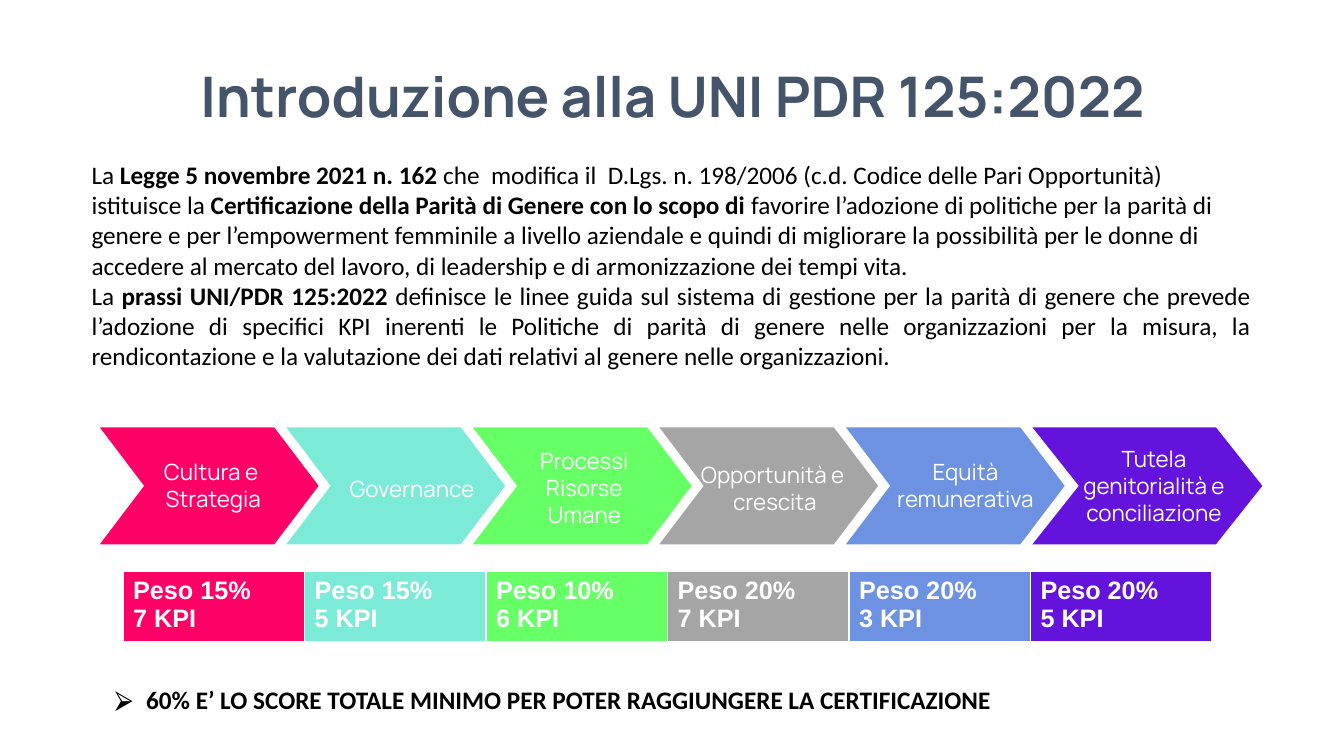
from lxml import etree
from pptx import Presentation
from pptx.dml.color import RGBColor
from pptx.enum.shapes import MSO_SHAPE
from pptx.enum.text import MSO_ANCHOR, MSO_AUTO_SIZE, PP_ALIGN
from pptx.oxml.ns import qn
from pptx.util import Inches, Pt

CHEVRON = MSO_SHAPE.CHEVRON
TOP = MSO_ANCHOR.TOP
GROW = MSO_AUTO_SIZE.SHAPE_TO_FIT_TEXT
LEFT, CENTER, JUSTIFY = PP_ALIGN.LEFT, PP_ALIGN.CENTER, PP_ALIGN.JUSTIFY

WHITE, BLACK, SLATE = "FFFFFF", "000000", "44546A"

AREAS = [
    ("FF0066", ["Cultura e ", "Strategia"], (1.22, 4.5, 0.64), 15, 7),
    ("7BEBD8", ["Governance"], (3.19, 4.66, 0.37), 15, 5),
    ("66FF66", ["Processi Risorse", "Umane"], (4.9, 4.39, 0.91), 10, 6),
    ("A5A5A5", ["Opportunità e ", "crescita"], (6.79, 4.53, 0.64), 20, 7),
    ("6C92E1", ["Equità remunerativa"], (8.68, 4.5, 0.64), 20, 3),
    ("6313DC", ["Tutela genitorialità e conciliazione"], (10.55, 4.37, 0.91), 20, 5),
]

LAW = [
    ("La ", False),
    ("Legge 5 novembre 2021 n. 162 ", True),
    ("che  modifica il  D.Lgs. n. 198/2006 (c.d. Codice delle Pari Opportunità) "
     "istituisce la ", False),
    ("Certificazione della Parità di Genere con lo scopo di ", True),
    ("favorire l’adozione di politiche per la parità di genere e per l’empowerment "
     "femminile a livello aziendale e quindi di migliorare la possibilità per le donne "
     "di accedere al mercato del lavoro, di leadership e di armonizzazione dei tempi "
     "vita.", False),
]
PRACTICE = [
    ("La ", False),
    ("prassi UNI/PDR 125:2022 ", True),
    ("definisce le linee guida sul sistema di gestione per la parità di genere che "
     "prevede l’adozione di specifici KPI inerenti le Politiche di parità di genere "
     "nelle organizzazioni per la misura, la rendicontazione e la valutazione dei dati "
     "relativi al genere nelle organizzazioni.", False),
]
MINIMUM_SCORE = "60% E’ LO SCORE TOTALE MINIMO PER POTER RAGGIUNGERE LA CERTIFICAZIONE"


def rgb(value):
    return RGBColor.from_string(value)


class SlideBuilder:
    heading_font, body_font, table_font = "Manrope", "Calibri", "Arial"

    def __init__(self, slide):
        self.slide = slide

    def add_runs(self, frame, paragraphs, font, size, color):
        for index, (runs, align) in enumerate(paragraphs):
            paragraph = frame.paragraphs[0] if index == 0 else frame.add_paragraph()
            paragraph.alignment = align
            paragraph.space_before = Pt(0)
            for text, bold in runs:
                run = paragraph.add_run()
                run.text = text
                run.font.name = font
                run.font.size = Pt(size)
                run.font.bold = bold
                run.font.color.rgb = rgb(color)

    def place(self, placeholder, left, top, width, height):
        placeholder.left, placeholder.top = Inches(left), Inches(top)
        placeholder.width, placeholder.height = Inches(width), Inches(height)
        frame = placeholder.text_frame
        frame.word_wrap = True
        frame.auto_size = GROW
        frame.vertical_anchor = TOP
        return frame

    def title(self, text, *box):
        frame = self.place(self.slide.shapes.title, *box)
        self.add_runs(frame, [([(text, True)], CENTER)], self.heading_font, 40, SLATE)

    def bullet(self, text, *box):
        frame = self.place(self.slide.placeholders[1], *box)
        self.add_runs(frame, [([(text, True)], JUSTIFY)], self.body_font, 18, BLACK)
        paragraph = frame.paragraphs[0]
        paragraph.level = 1
        properties = paragraph._p.get_or_add_pPr()
        properties.set("marL", str(Inches(0.81)))
        properties.set("indent", str(Inches(-0.31)))
        bullet_color = etree.SubElement(properties, qn("a:buClr"))
        etree.SubElement(bullet_color, qn("a:srgbClr"), val=BLACK)
        etree.SubElement(properties, qn("a:buFont"), typeface=self.table_font)
        etree.SubElement(properties, qn("a:buChar"), char="⮚")

    def text(self, paragraphs, font, size, color, *box):
        frame = self.place(self.slide.shapes.add_textbox(0, 0, 0, 0), *box)
        self.add_runs(frame, paragraphs, font, size, color)

    def chevron(self, color, left, top, width, height, point):
        shape = self.slide.shapes.add_shape(
            CHEVRON, Inches(left), Inches(top), Inches(width), Inches(height))
        shape.adjustments[0] = point / height
        shape.shadow.inherit = False
        shape.fill.solid()
        shape.fill.fore_color.rgb = rgb(color)
        shape.line.fill.background()

    def border(self, cell, side, width):
        line = etree.SubElement(cell._tc.get_or_add_tcPr(), qn(f"a:ln{side}"),
                                w=str(Pt(width)))
        fill = etree.SubElement(line, qn("a:solidFill"))
        etree.SubElement(fill, qn("a:srgbClr"), val=WHITE)

    def weights(self, areas, left, top, column_width, height):
        table = self.slide.shapes.add_table(
            1, len(areas), Inches(left), Inches(top),
            Inches(column_width * len(areas)), Inches(height)).table
        for column, (color, _, _, weight, kpis) in enumerate(areas):
            table.columns[column].width = Inches(column_width)
            cell = table.cell(0, column)
            for side, width in (("L", 1), ("R", 1), ("T", 1), ("B", 3)):
                self.border(cell, side, width)
            cell.fill.solid()
            cell.fill.fore_color.rgb = rgb(color)
            lines = (f"Peso {weight}%", f"{kpis} KPI")
            self.add_runs(cell.text_frame, [([(line, True)], LEFT) for line in lines],
                          self.table_font, 18, WHITE)


def main():
    deck = Presentation()
    deck.slide_width, deck.slide_height = Inches(13.33), Inches(7.5)
    builder = SlideBuilder(deck.slides.add_slide(deck.slide_layouts[1]))

    builder.title("Introduzione alla UNI PDR 125:2022", 1.71, 0.56, 9.92, 0.77)
    builder.text([(LAW, LEFT), (PRACTICE, JUSTIFY)], builder.body_font, 18, BLACK,
                 0.81, 1.53, 11.7, 2.22)

    for index, (color, *_) in enumerate(AREAS):
        is_last = index == len(AREAS) - 1
        width, point = (2.28, 0.46) if is_last else (2.17, 0.44)
        builder.chevron(color, 0.99 + 1.85 * index, 4.24, width, 1.16, point)
    for _, label, (left, top, height), *_ in AREAS:
        builder.text([([(line, False)], CENTER) for line in label],
                     builder.heading_font, 16, WHITE, left, top, 1.79, height)

    builder.weights(AREAS, 1.22, 5.67, 1.8, 0.71)
    builder.bullet(MINIMUM_SCORE, 0.54, 6.74, 12.18, 0.4)
    deck.save("out.pptx")


if __name__ == "__main__":
    main()
